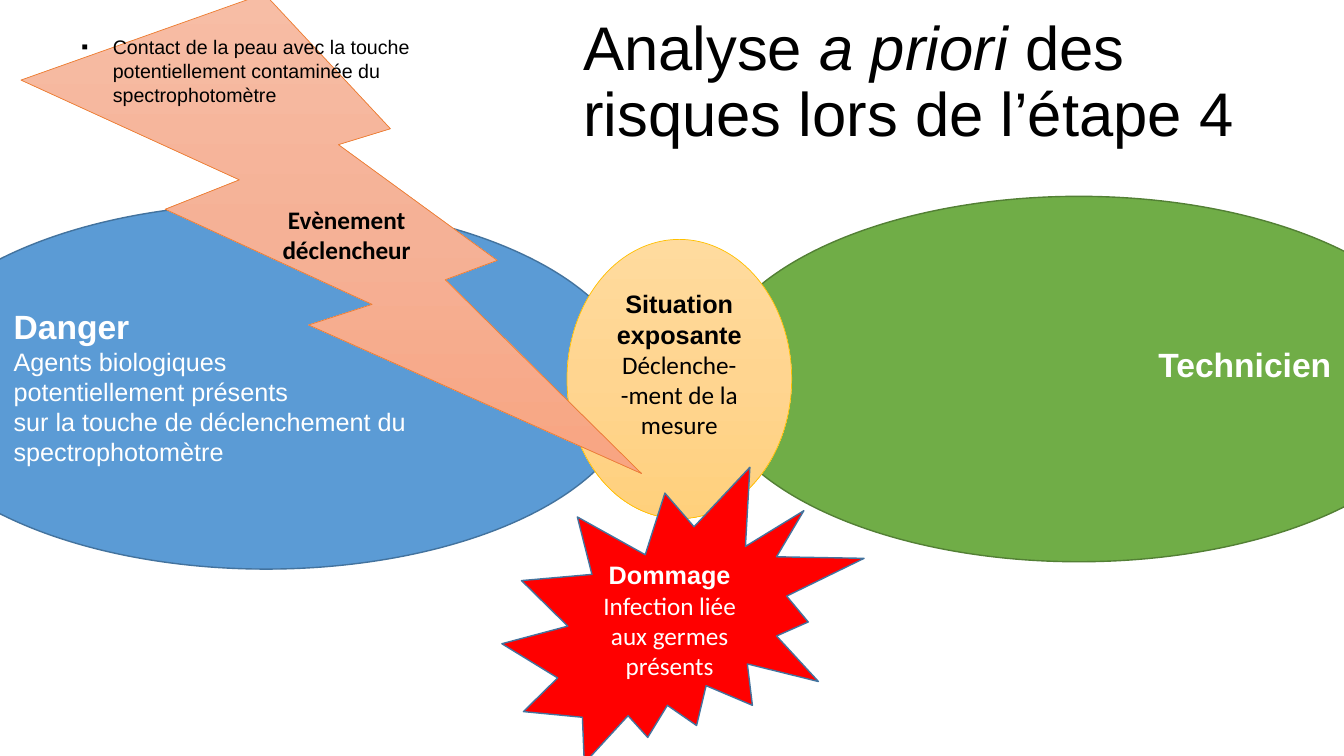
from copy import deepcopy
from dataclasses import dataclass

from lxml import etree
from pptx import Presentation
from pptx import util as u
from pptx.dml.color import RGBColor
from pptx.enum import shapes, text
from pptx.oxml.ns import qn

PX = 9525  # EMU per px, 96 px to the inch

BLACK = RGBColor(0x00, 0x00, 0x00)
WHITE = RGBColor(0xFF, 0xFF, 0xFF)
BLUE = RGBColor(0x5B, 0x9B, 0xD5)
BLUE_EDGE = RGBColor(0x43, 0x73, 0x9E)
GREEN = RGBColor(0x70, 0xAD, 0x47)
GREEN_EDGE = RGBColor(0x53, 0x80, 0x35)
GOLD_EDGE = RGBColor(0xFF, 0xC0, 0x00)
ORANGE_EDGE = RGBColor(0xED, 0x7D, 0x31)
RED = RGBColor(0xFF, 0x00, 0x00)
GOLDS = (RGBColor(0xFF, 0xDB, 0x9E), RGBColor(0xFF, 0xD5, 0x90), RGBColor(0xFF, 0xD0, 0x7C))
ORANGES = (RGBColor(0xF7, 0xBD, 0xA5), RGBColor(0xF5, 0xB1, 0x96), RGBColor(0xF8, 0xA5, 0x82))

LEFT, CENTER, RIGHT = text.PP_ALIGN.LEFT, text.PP_ALIGN.CENTER, text.PP_ALIGN.RIGHT
SHAPE = shapes.MSO_SHAPE


@dataclass(frozen=True)
class Line:
    words: str
    size: int = 18
    bold: bool = False
    font: str = "Arial"


@dataclass(frozen=True)
class Factor:
    """One element of the risk diagram; three fill colours make a gradient."""
    kind: SHAPE
    box: tuple[int, int, int, int]
    fill: tuple[RGBColor, ...]
    edge: RGBColor
    edge_pt: float
    ink: RGBColor
    lines: tuple[Line, ...]
    align: text.PP_ALIGN = CENTER
    bottom: int = 5


FACTORS = (
    Factor(SHAPE.OVAL, (-100, 194, 707, 348), (BLUE,), BLUE_EDGE, 1, WHITE, (
        Line("Danger", 24, True),
        Line("Agents biologiques"),
        Line("potentiellement présents"),
        Line("sur la touche de déclenchement du spectrophotomètre"),
    ), align=LEFT),
    Factor(SHAPE.OVAL, (674, 187, 707, 348), (GREEN,), GREEN_EDGE, 1, WHITE,
           (Line("Technicien", 24, True),), align=RIGHT, bottom=33),
    Factor(SHAPE.OVAL, (540, 228, 214, 266), GOLDS, GOLD_EDGE, 0.5, BLACK, (
        Line("Situation exposante", bold=True),
        Line("Déclenche-", font="Calibri"),
        Line("-ment de la mesure", font="Calibri"),
    ), bottom=33),
    Factor(SHAPE.LIGHTNING_BOLT, (20, -6, 591, 457), ORANGES, ORANGE_EDGE, 0.5, BLACK,
           (Line("Evènement déclencheur", bold=True, font="Calibri"),)),
    Factor(SHAPE.EXPLOSION2, (478, 445, 345, 282), (RED,), BLUE_EDGE, 1, WHITE, (
        Line("Dommage", bold=True),
        Line("Infection liée aux germes présents", font="Calibri"),
    )),
)


def px(*values: int) -> list[u.Emu]:
    return [u.Emu(v * PX) for v in values]


def write(p, words: str, *, size: int = 18, font: str = "Arial",
          color: RGBColor = BLACK, bold: bool = False, italic: bool = False) -> None:
    r = p.add_run()
    r.text = words
    f = r.font
    f.size, f.name, f.bold, f.italic = u.Pt(size), font, bold, italic
    f.color.rgb = color


def paint(sp, colors: tuple[RGBColor, ...]) -> None:
    """Fill with one colour, or with three from top to bottom."""
    if len(colors) == 1:
        sp.fill.solid()
        sp.fill.fore_color.rgb = colors[0]
        return
    sp.fill.gradient()
    sp.fill.gradient_angle = 270
    stops = sp._element.spPr.find(".//" + qn("a:gsLst"))
    stops.insert(1, deepcopy(stops[0]))
    for i, (stop, color) in enumerate(zip(sp.fill.gradient_stops, colors)):
        stop.position = i / 2
        stop.color.rgb = color


def add_factor(s, factor: Factor) -> None:
    sp = s.shapes.add_shape(factor.kind, *px(*factor.box))
    sp.shadow.inherit = False
    paint(sp, factor.fill)
    sp.line.color.rgb = factor.edge
    sp.line.width = u.Pt(factor.edge_pt)
    tf = sp.text_frame
    tf.word_wrap = True
    tf.vertical_anchor = text.MSO_ANCHOR.MIDDLE
    tf.margin_bottom = px(factor.bottom)[0]
    for i, line in enumerate(factor.lines):
        p = tf.add_paragraph() if i else tf.paragraphs[0]
        p.alignment = factor.align
        write(p, line.words, size=line.size, font=line.font, color=factor.ink, bold=line.bold)


def add_text(s, box: tuple[int, int, int, int], anchor: text.MSO_ANCHOR):
    """Add a wrapping text box and return its first paragraph."""
    tf = s.shapes.add_textbox(*px(*box)).text_frame
    tf.word_wrap = True
    tf.vertical_anchor = anchor
    return tf.paragraphs[0]


def add_bullet(p, indent: int, hang: int) -> None:
    pPr = p._p.get_or_add_pPr()
    pPr.set("marL", str(indent * PX))
    pPr.set("indent", str(-hang * PX))
    etree.SubElement(pPr, qn("a:buFont")).set("typeface", "Arial")
    etree.SubElement(pPr, qn("a:buChar")).set("char", "▪")


def main() -> None:
    prs = Presentation()
    prs.slide_width, prs.slide_height = px(1280, 720)
    s = prs.slides.add_slide(prs.slide_layouts[6])

    title = add_text(s, (546, 10, 707, 139), text.MSO_ANCHOR.MIDDLE)
    title.line_spacing = 0.9
    write(title, "Analyse ", size=44)
    write(title, "a priori ", size=44, italic=True)
    write(title, "des risques lors de l’étape 4", size=44)

    *background, damage = FACTORS
    for factor in background:
        add_factor(s, factor)

    trigger = add_text(s, (20, 29, 395, 78), text.MSO_ANCHOR.TOP)
    add_bullet(trigger, indent=78, hang=30)
    write(trigger, "Contact de la peau avec la touche potentiellement contaminée "
                   "du spectrophotomètre", size=14)

    add_factor(s, damage)
    prs.save("out.pptx")


if __name__ == "__main__":
    main()
